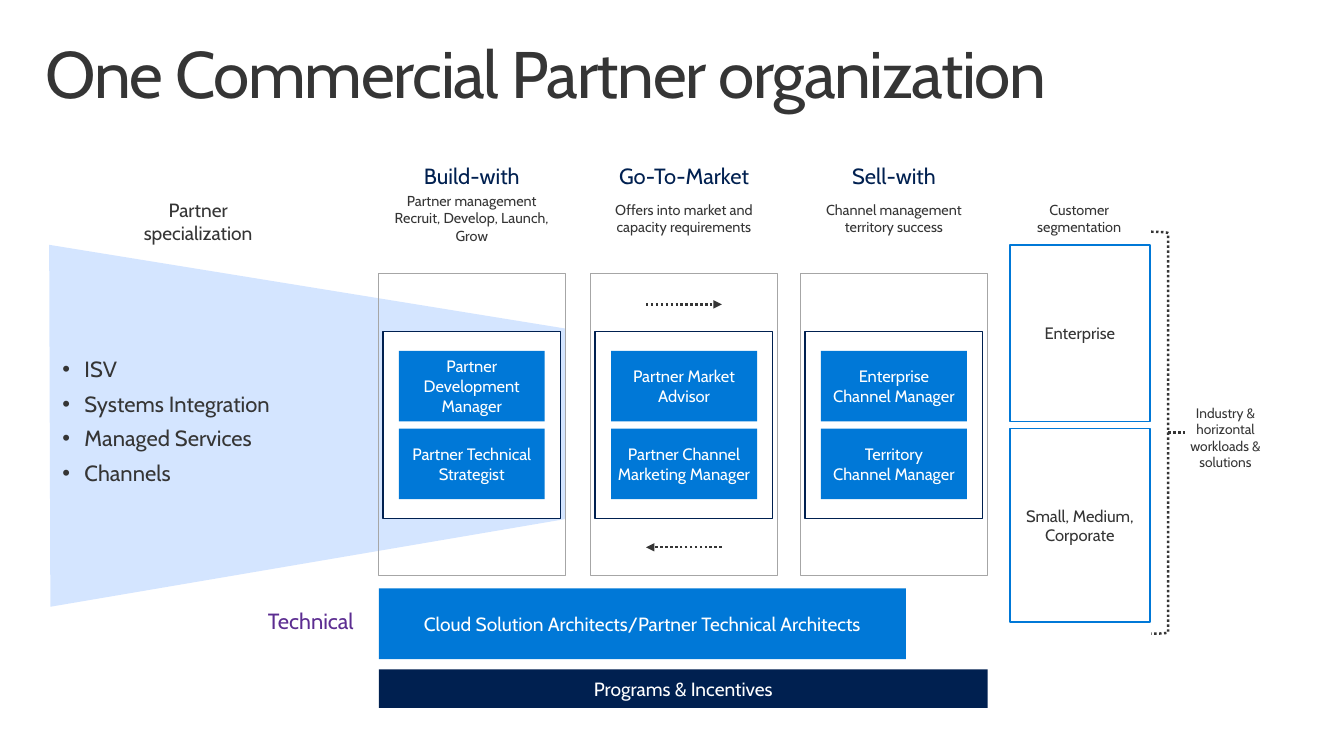
from lxml import etree
from pptx import Presentation
from pptx import util as u
from pptx.dml.color import RGBColor
from pptx.enum import dml, shapes, text
from pptx.oxml.ns import qn

FONT = "Cabin"
INK = RGBColor(0x35, 0x35, 0x35)
NAVY = RGBColor(0x00, 0x20, 0x50)
BLUE = RGBColor(0x00, 0x78, 0xD7)
PALE = RGBColor(0xD4, 0xE5, 0xFF)
GREY = RGBColor(0xA6, 0xA6, 0xA6)
PURPLE = RGBColor(0x5C, 0x2D, 0x91)
WHITE = RGBColor(0xFF, 0xFF, 0xFF)

STAGES = [
    (9.53, "Build-with", "Partner management\nRecruit, Develop, Launch, Grow",
     ["Partner Development Manager", "Partner Technical Strategist"]),
    (14.88, "Go-To-Market", "Offers into market and\ncapacity requirements",
     ["Partner Market Advisor", "Partner Channel Marketing Manager"]),
    (20.17, "Sell-with", "Channel management\nterritory success",
     ["Enterprise\nChannel Manager", "Territory\nChannel Manager"]),
]
STAGE_WIDTH = 4.72
SPECIALIZATIONS = ["ISV", "Systems Integration", "Managed Services", "Channels"]


def place(left, top, width, height):
    return [u.Cm(length) for length in (left, top, width, height)]


def style_run(run, size, color):
    run.font.name = FONT
    run.font.size = u.Pt(size)
    run.font.color.rgb = color


def write(paragraph, words, size, color):
    for index, line in enumerate(words.split("\n")):
        if index:
            paragraph.add_line_break()
        run = paragraph.add_run()
        run.text = line
        style_run(run, size, color)


def set_frame(frame, inset=(0, 0, 0, 0), anchor=text.MSO_ANCHOR.MIDDLE, wrap=True):
    frame.margin_left, frame.margin_top, frame.margin_right, frame.margin_bottom = place(*inset)
    frame.vertical_anchor = anchor
    frame.word_wrap = wrap


def add_label(slide, spot, words, size, color=INK, wrap=False):
    frame = slide.shapes.add_textbox(*place(*spot)).text_frame
    set_frame(frame, wrap=wrap)
    frame.paragraphs[0].alignment = text.PP_ALIGN.CENTER
    write(frame.paragraphs[0], words, size, color)


def add_panel(slide, spot, fill=None, line=None, weight=1, words="", size=11.8,
              color=WHITE, inset=0):
    panel = slide.shapes.add_shape(shapes.MSO_SHAPE.RECTANGLE, *place(*spot))
    panel.shadow.inherit = False
    if fill is None:
        panel.fill.background()
    else:
        panel.fill.solid()
        panel.fill.fore_color.rgb = fill
    if line is None:
        panel.line.fill.background()
    else:
        panel.line.color.rgb = line
        panel.line.width = u.Pt(weight)
    if words:
        set_frame(panel.text_frame, (inset,) * 4)
        panel.text_frame.paragraphs[0].alignment = text.PP_ALIGN.CENTER
        write(panel.text_frame.paragraphs[0], words, size, color)


def make_dotted(line):
    line.color.rgb = INK
    line.width = u.Pt(1.75)
    line.dash_style = dml.MSO_LINE.ROUND_DOT


def add_dotted_line(slide, start, end, y, arrow=False):
    link = slide.shapes.add_connector(
        shapes.MSO_CONNECTOR.STRAIGHT, u.Cm(start), u.Cm(y), u.Cm(end), u.Cm(y))
    make_dotted(link.line)
    properties = link.element.spPr
    if arrow:
        etree.SubElement(properties.find(qn("a:ln")), qn("a:tailEnd"), type="triangle")
    etree.SubElement(properties, qn("a:effectLst"))


def add_title(slide, words):
    title = slide.shapes.title
    title.left, title.top, title.width, title.height = place(0.74, 0.81, 32.39, 2.49)
    set_frame(title.text_frame, (0.41, 0.25, 0.41, 0.25), text.MSO_ANCHOR.TOP)
    paragraph = title.text_frame.paragraphs[0]
    paragraph.alignment = text.PP_ALIGN.LEFT
    paragraph.line_spacing = 0.9
    write(paragraph, words, 47, INK)
    paragraph.runs[0].font.element.set("spc", "-100") if hasattr(
        paragraph.runs[0].font, "element") else paragraph.runs[0]._r.get_or_add_rPr().set("spc", "-100")


def add_funnel(slide):
    corners = [(1.27, 15.29), (1.24, 6.17), (14.25, 8.28), (14.25, 13.08)]
    points = [(u.Cm(x), u.Cm(y)) for x, y in corners]
    builder = slide.shapes.build_freeform(*points[0], scale=1.0)
    builder.add_line_segments(points[1:], close=True)
    funnel = builder.convert_to_shape()
    funnel.shadow.inherit = False
    funnel.fill.solid()
    funnel.fill.fore_color.rgb = PALE
    funnel.line.fill.background()


def add_bullets(slide, spot, items):
    frame = slide.shapes.add_textbox(*place(*spot)).text_frame
    set_frame(frame, (0.25, 0.41, 0.51, 0.41))
    for index, item in enumerate(items):
        paragraph = frame.add_paragraph() if index else frame.paragraphs[0]
        properties = paragraph._p.get_or_add_pPr()
        properties.set("marL", str(u.Cm(0.56)))
        properties.set("indent", str(-u.Cm(0.56)))
        etree.SubElement(properties, qn("a:buFont"), typeface="Arial")
        etree.SubElement(properties, qn("a:buChar"), char="•")
        if index:
            paragraph.space_before = u.Pt(5.9)
        write(paragraph, item, 15.7, INK)


def add_stage(slide, left, heading, duties, roles):
    add_label(slide, (left, 4.09, STAGE_WIDTH, 0.66), heading, 15.7, NAVY)
    add_label(slide, (left, 5.05, STAGE_WIDTH, 0.89), duties, 10.3)
    add_panel(slide, (left, 6.88, STAGE_WIDTH, 7.62), line=GREY, weight=0.5)
    add_panel(slide, (left + 0.12, 8.36, 4.47, 4.7), WHITE, NAVY)
    for row, role in enumerate(roles):
        add_panel(slide, (left + 0.52, 8.84 + row * 1.96, 3.68, 1.78), BLUE, words=role)


def add_segments(slide):
    add_label(slide, (26.11, 5.05, 2.18, 0.89), "Customer\nsegmentation", 10.3)
    for top, height, segment in [(6.17, 4.45, "Enterprise"),
                                 (10.8, 4.88, "Small, Medium, Corporate")]:
        add_panel(slide, (25.45, top, 3.53, height), line=BLUE, words=segment,
                  color=INK, inset=0.2)
    bracket = slide.shapes.add_shape(
        shapes.MSO_SHAPE.RIGHT_BRACKET, *place(29.01, 5.84, 0.43, 10.13))
    bracket.shadow.inherit = False
    bracket.fill.background()
    make_dotted(bracket.line)
    add_dotted_line(slide, 29.44, 29.92, 10.9)
    add_label(slide, (29.97, 10.19, 1.83, 1.68),
              "Industry & horizontal workloads & solutions", 9.8, wrap=True)


def main():
    deck = Presentation()
    deck.slide_width, deck.slide_height = u.Cm(33.87), u.Cm(19.05)
    slide = deck.slides.add_slide(deck.slide_layouts[5])
    add_title(slide, "One Commercial Partner organization")
    add_funnel(slide)
    add_label(slide, (3.56, 5, 2.87, 1.17), "Partner\nspecialization", 13.7)
    add_bullets(slide, (1.32, 8.66, 9.37, 3.89), SPECIALIZATIONS)
    for stage in STAGES:
        add_stage(slide, *stage)
    add_dotted_line(slide, 16.28, 18.19, 7.67, arrow=True)
    add_dotted_line(slide, 18.19, 16.28, 13.79, arrow=True)
    add_segments(slide)
    add_label(slide, (6.68, 15.32, 2.31, 0.66), "Technical", 15.7, PURPLE)
    add_panel(slide, (9.55, 14.83, 13.28, 1.78), BLUE, size=13.7,
              words="Cloud Solution Architects/Partner Technical Architects")
    add_panel(slide, (9.55, 16.87, 15.34, 0.97), NAVY, size=13.7,
              words="Programs & Incentives")
    deck.save("out.pptx")


if __name__ == "__main__":
    main()
